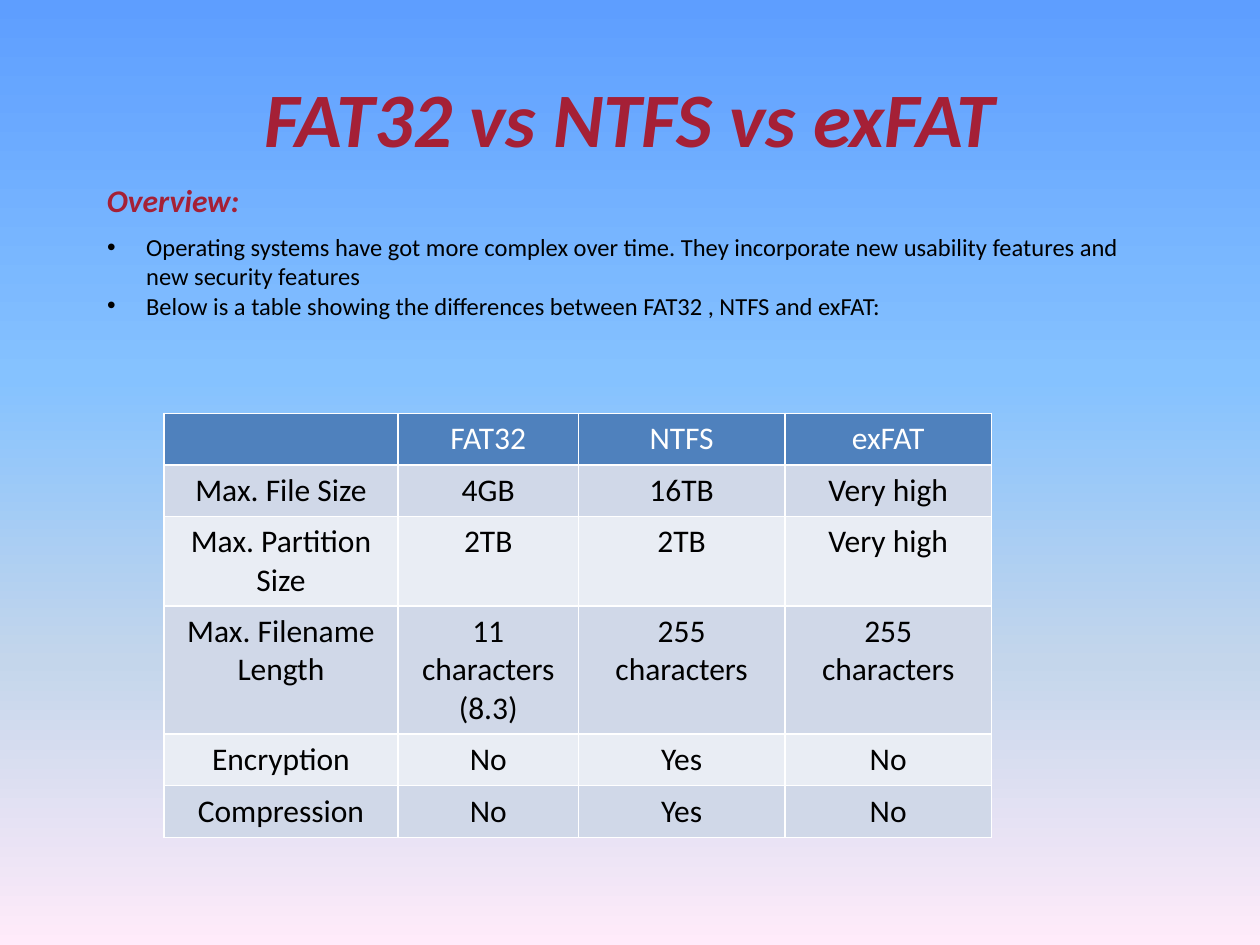
"""Build a slide comparing the FAT32, NTFS and exFAT file systems."""
from lxml import etree
from pptx import Presentation
from pptx.dml.color import RGBColor
from pptx.enum.text import MSO_ANCHOR, MSO_AUTO_SIZE, PP_ALIGN
from pptx.oxml.ns import qn
from pptx.util import Inches, Pt

CENTER, LEFT = PP_ALIGN.CENTER, PP_ALIGN.LEFT
MIDDLE, TOP = MSO_ANCHOR.MIDDLE, MSO_ANCHOR.TOP
NO_AUTOFIT = MSO_AUTO_SIZE.NONE

CRIMSON = RGBColor(0xA5, 0x20, 0x36)
BLACK = RGBColor(0, 0, 0)
WHITE = RGBColor(0xFF, 0xFF, 0xFF)
HEADER_BLUE = RGBColor(0x4F, 0x81, 0xBD)
BANDS = (RGBColor(0xE9, 0xED, 0xF4), RGBColor(0xD0, 0xD8, 0xE8))
SKY = (
    (0, RGBColor(0x5E, 0x9E, 0xFF)),
    (40, RGBColor(0x85, 0xC2, 0xFF)),
    (70, RGBColor(0xC4, 0xD6, 0xEB)),
    (100, RGBColor(0xFF, 0xEB, 0xFA)),
)
FONT = "Calibri"

TITLE = "FAT32 vs NTFS vs exFAT"
HEADING = "Overview:"
POINTS = [
    "Operating systems have got more complex over time. They incorporate "
    "new usability features and new security features",
    "Below is a table showing the differences between FAT32 , NTFS and exFAT:",
]
COMPARISON = [
    ("", "FAT32", "NTFS", "exFAT"),
    ("Max. File Size", "4GB", "16TB", "Very high"),
    ("Max. Partition Size", "2TB", "2TB", "Very high"),
    ("Max. Filename Length", "11 characters (8.3)", "255 characters", "255 characters"),
    ("Encryption", "No", "Yes", "No"),
    ("Compression", "No", "Yes", "No"),
]
COLUMN_WIDTHS = (1.86, 1.43, 1.64, 1.64)
ROW_HEIGHT = 0.41
TABLE_LEFT, TABLE_TOP = 1.3, 3.28
TEXT_LEFT = 0.75
INDENT = 0.31


def paint_sky(slide):
    fill = slide.background.fill
    fill.gradient()
    fill.gradient_angle = 270
    stops = next(slide.element.iter(qn("a:gsLst")))
    for stop in list(stops):
        stops.remove(stop)
    for percent, color in SKY:
        stop = etree.SubElement(stops, qn("a:gs"), pos=str(percent * 1000))
        etree.SubElement(stop, qn("a:srgbClr"), val=str(color))


def place(part, left, top, width, height):
    part.left, part.top = Inches(left), Inches(top)
    part.width, part.height = Inches(width), Inches(height)


def style(paragraph, size, color, align=LEFT, emphasis=False):
    paragraph.alignment = align
    font = paragraph.font
    font.name, font.size = FONT, Pt(size)
    font.bold = font.italic = emphasis
    font.color.rgb = color


def write(frame, lines, size, color, anchor=TOP, **look):
    frame.word_wrap = True
    frame.auto_size = NO_AUTOFIT
    frame.vertical_anchor = anchor
    frame.text = "\n".join(lines)
    for paragraph in frame.paragraphs:
        style(paragraph, size, color, **look)


def add_bullet(paragraph):
    paragraph.space_before = Pt(0)
    properties = paragraph._p.get_or_add_pPr()
    properties.set("marL", str(Inches(INDENT)))
    properties.set("indent", str(-Inches(INDENT)))
    etree.SubElement(properties, qn("a:buFont"), typeface="Arial")
    etree.SubElement(properties, qn("a:buChar"), char="•")
    properties.append(properties.find(qn("a:defRPr")))


def add_borders(cell):
    properties = cell._tc.get_or_add_tcPr()
    for side in ("lnL", "lnR", "lnT", "lnB"):
        line = etree.SubElement(properties, qn(f"a:{side}"), w=str(Pt(1)))
        fill = etree.SubElement(line, qn("a:solidFill"))
        etree.SubElement(fill, qn("a:srgbClr"), val=str(WHITE))


def add_comparison(slide):
    table = slide.shapes.add_table(
        len(COMPARISON), len(COLUMN_WIDTHS), Inches(TABLE_LEFT), Inches(TABLE_TOP),
        Inches(sum(COLUMN_WIDTHS)), Inches(ROW_HEIGHT * len(COMPARISON)),
    ).table
    for column, width in zip(table.columns, COLUMN_WIDTHS):
        column.width = Inches(width)
    for index, (row, values) in enumerate(zip(table.rows, COMPARISON)):
        row.height = Inches(ROW_HEIGHT)
        for cell, value in zip(row.cells, values):
            cell.text = value
            style(cell.text_frame.paragraphs[0], 18, BLACK if index else WHITE, CENTER)
            add_borders(cell)
            cell.fill.solid()
            cell.fill.fore_color.rgb = BANDS[index % 2] if index else HEADER_BLUE


def main():
    deck = Presentation()
    deck.slide_width, deck.slide_height = Inches(10), Inches(7.5)
    slide = deck.slides.add_slide(deck.slide_layouts[1])
    paint_sky(slide)

    title, overview = slide.placeholders
    place(title, 0.5, 0.3, 9, 1.25)
    write(title.text_frame, [TITLE], 44, CRIMSON, MIDDLE, align=CENTER, emphasis=True)

    add_comparison(slide)

    heading = slide.shapes.add_textbox(0, 0, 0, 0)
    place(heading, TEXT_LEFT, 1.39, 8.58, 0.4)
    write(heading.text_frame, [HEADING], 18, CRIMSON, emphasis=True)

    place(overview, TEXT_LEFT, 1.79, 8.35, 0.81)
    write(overview.text_frame, POINTS, 14, BLACK)
    for paragraph in overview.text_frame.paragraphs:
        add_bullet(paragraph)

    deck.save("out.pptx")


if __name__ == "__main__":
    main()
